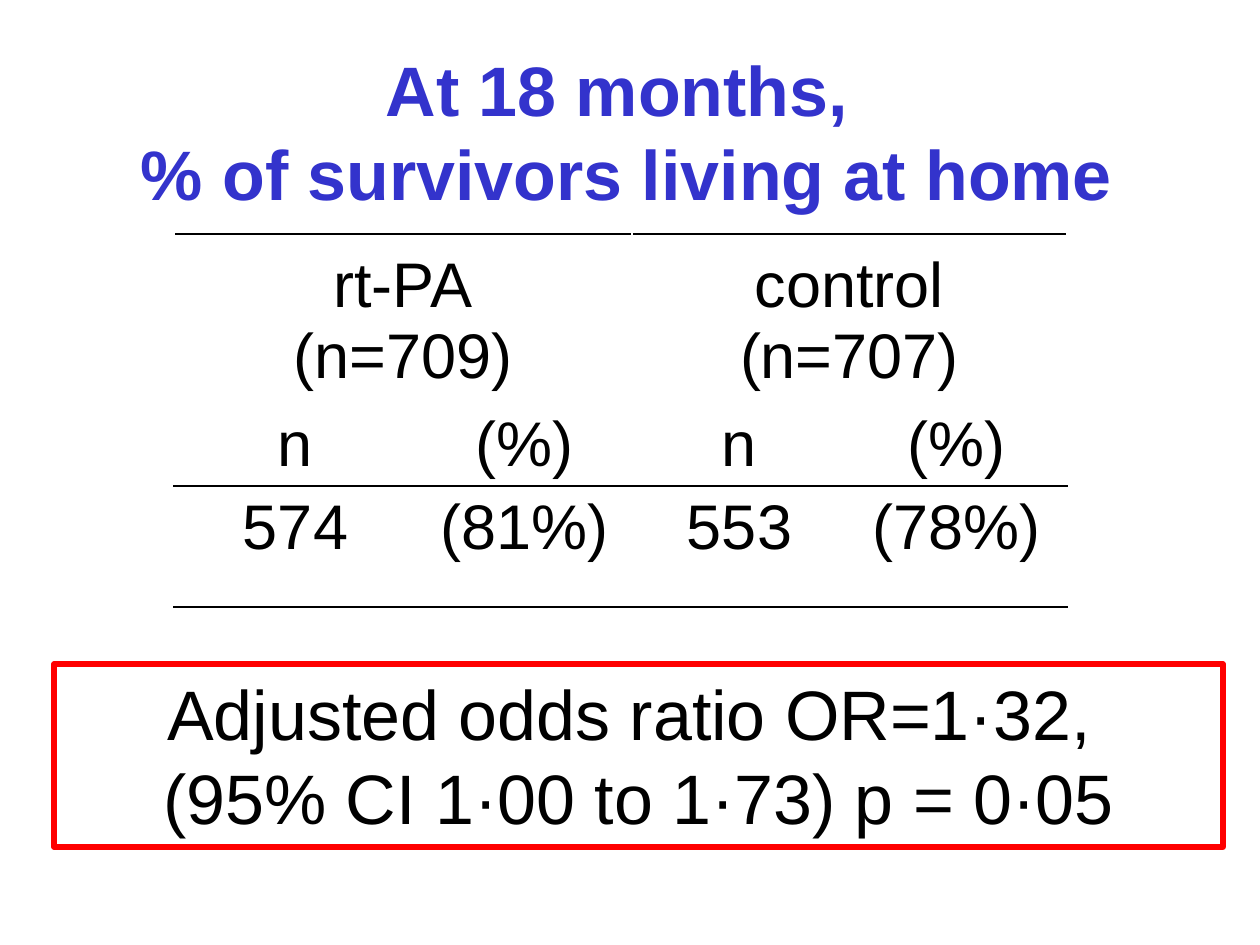
from lxml import etree
from pptx import Presentation
from pptx import util as u
from pptx.dml.color import RGBColor
from pptx.enum import shapes, text
from pptx.oxml.ns import qn

SCALE = 914400 / 126
BLUE, BLACK, RED = "3333CC", "000000", "FF0000"


def px(length):
    return u.Emu(round(length * SCALE))


def color(value):
    return RGBColor.from_string(value)


def set_all(target, values):
    for name, value in values.items():
        setattr(target, name, value)


class SlideBuilder:
    font_name = "Arial"

    def __init__(self, slide):
        self.slide = slide

    def fill_text(self, frame, lines, size, ink=BLACK, bold=False):
        for index, line in enumerate(lines):
            paragraph = frame.add_paragraph() if index else frame.paragraphs[0]
            paragraph.text = line
            paragraph.alignment = text.PP_ALIGN.CENTER
            for run in paragraph.runs:
                set_all(run.font, {"name": self.font_name, "size": u.Pt(size), "bold": bold})
                run.font.color.rgb = color(ink)

    def title(self, box, line):
        frame = self.slide.shapes.add_textbox(*map(px, box)).text_frame
        set_all(frame, {"word_wrap": True, "vertical_anchor": text.MSO_ANCHOR.MIDDLE})
        self.fill_text(frame, [line], 40, BLUE, True)

    def outlined_box(self, box, lines):
        shape = self.slide.shapes.add_shape(shapes.MSO_SHAPE.RECTANGLE, *map(px, box))
        shape.shadow.inherit = False
        shape.fill.background()
        shape.line.color.rgb = color(RED)
        shape.line.width = u.Pt(3)
        set_all(shape.text_frame, {
            "word_wrap": True,
            "vertical_anchor": text.MSO_ANCHOR.TOP,
            "auto_size": text.MSO_AUTO_SIZE.SHAPE_TO_FIT_TEXT,
        })
        self.fill_text(shape.text_frame, lines, 40)

    def border(self, cell, sides):
        properties = cell._tc.get_or_add_tcPr()
        for index, side in enumerate(sides):
            line = etree.Element(qn(f"a:ln{side}"), w=str(int(u.Pt(1))))
            fill = etree.SubElement(line, qn("a:solidFill"))
            etree.SubElement(fill, qn("a:srgbClr"), val=BLACK)
            properties.insert(index, line)

    def table(self, left, top, widths, heights, rows, row_borders):
        frame = self.slide.shapes.add_table(
            len(heights), len(widths), px(left), px(top), px(sum(widths)), px(sum(heights)))
        table = frame.table
        set_all(table, {"first_row": False, "horz_banding": False})
        for column, width in zip(table.columns, widths):
            column.width = px(width)
        for row, height in zip(table.rows, heights):
            row.height = px(height)
        last = len(rows) - 1
        for r, (row, sides) in enumerate(zip(rows, row_borders)):
            span = len(widths) // len(row)
            for c in range(len(widths)):
                cell = table.cell(r, c)
                cell.fill.background()
                self.border(cell, sides)
                cell.vertical_anchor = text.MSO_ANCHOR.TOP if r == last else text.MSO_ANCHOR.BOTTOM
                if c % span == 0:
                    if span > 1:
                        cell.merge(table.cell(r, c + span - 1))
                    self.fill_text(cell.text_frame, row[c // span].split("\n"), 36)


def main():
    presentation = Presentation()
    set_all(presentation, {"slide_width": px(1260), "slide_height": px(945)})
    builder = SlideBuilder(presentation.slides.add_slide(presentation.slide_layouts[6]))
    builder.title((25, 26, 1203, 208), "At 18 months, \v% of survivors living at home")
    builder.table(
        174, 234, [243, 215, 215, 220], [159, 78, 121],
        [
            ["rt-PA\n(n=709)", "control\n(n=707)"],
            ["n", "(%)", "n", "(%)"],
            ["574", "(81%)", "553", "(78%)"],
        ],
        ["T", "B", "TB"],
    )
    builder.outlined_box(
        (54, 664, 1169, 183),
        ["Adjusted odds ratio OR=1·32, ", "(95% CI 1·00 to 1·73) p = 0·05"])
    presentation.save("out.pptx")


if __name__ == "__main__":
    main()
